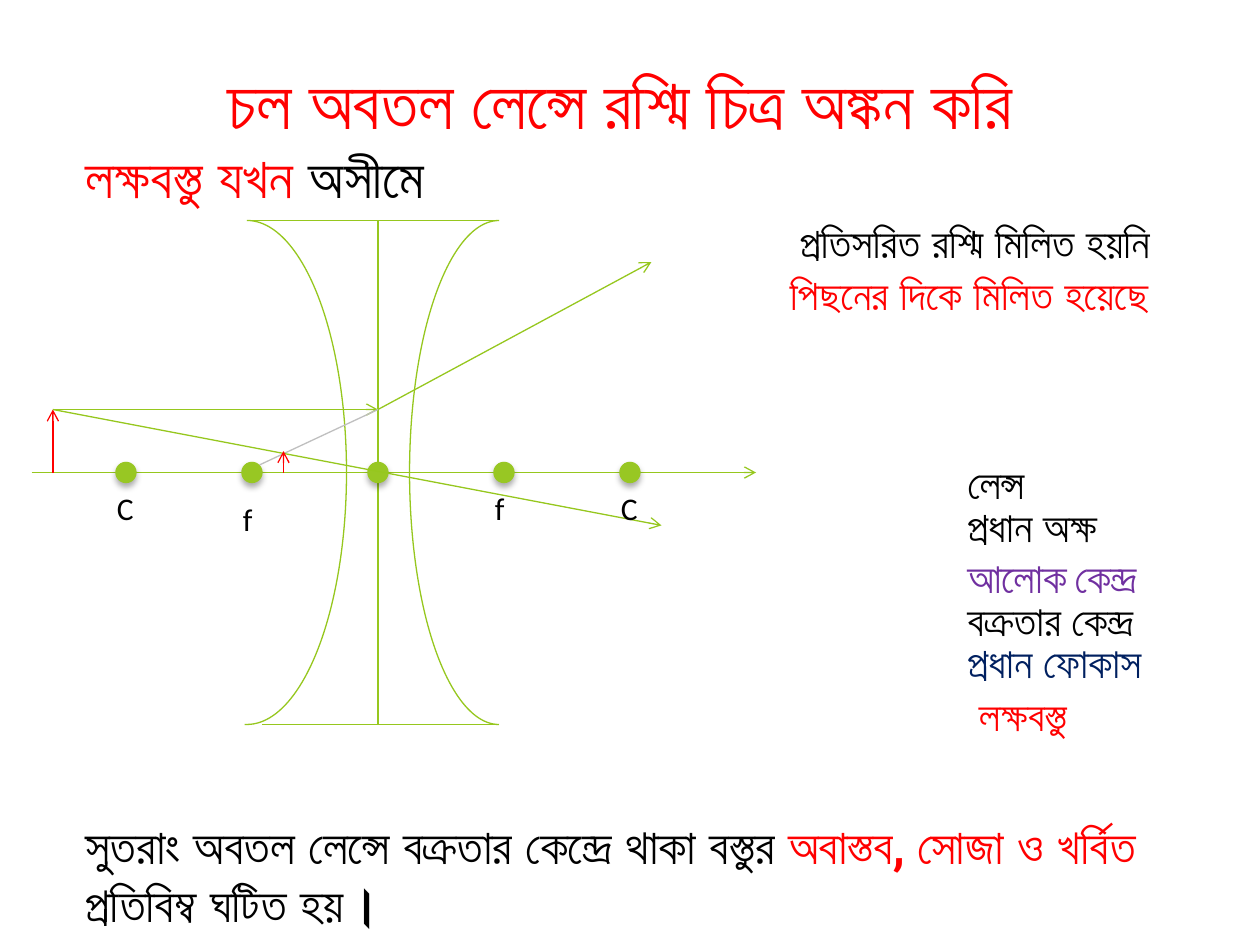
import dataclasses

import pptx
import pptx.dml.color
import pptx.enum.shapes
import pptx.enum.text
import pptx.oxml
import pptx.util
from pptx.util import Inches

DRAWING = 'xmlns:a="http://schemas.openxmlformats.org/drawingml/2006/main"'


@dataclasses.dataclass(frozen=True)
class Theme:
    """Colours, fonts and type sizes of the slide."""
    line: str = "96C71E"
    dot: str = "98C723"
    red: str = "FF0000"
    black: str = "000000"
    grey: str = "BFBFBF"
    purple: str = "7030A0"
    navy: str = "002060"
    bengali: str = "Roboto"
    latin: str = "Calibri"
    title: int = 40
    subtitle: int = 32
    conclusion: int = 28
    label: int = 24
    point: int = 18


THEME = Theme()


def colour(value):
    """Return a colour object for a hex string."""
    return pptx.dml.color.RGBColor.from_string(value)


def fill_text(box, spans, size, align=None, wrap=True, bold=None, font=THEME.bengali):
    """Write (text, colour[, size]) spans as one paragraph of a box."""
    frame = box.text_frame
    frame.word_wrap = wrap
    frame.auto_size = pptx.enum.text.MSO_AUTO_SIZE.SHAPE_TO_FIT_TEXT
    para = frame.paragraphs[0]
    para.alignment = align
    for text, shade, *own_size in spans:
        span = para.add_run()
        span.text = text
        points = own_size[0] if own_size else size
        formats = {"name": font, "size": pptx.util.Pt(points), "bold": bold}
        for name, value in formats.items():
            setattr(span.font, name, value)
        span.font.color.rgb = colour(shade)


def add_text(page, place, spans, size, **options):
    """Add a text box at left, top, width, height."""
    box = page.shapes.add_textbox(*map(Inches, place))
    fill_text(box, spans, size, **options)


def add_line(page, start, end, shade=THEME.line, arrow=False):
    """Add a straight line, with an open arrowhead if asked."""
    line = page.shapes.add_connector(
        pptx.enum.shapes.MSO_CONNECTOR.STRAIGHT, *map(Inches, (*start, *end)))
    line.line.width = pptx.util.Pt(0.75)
    line.line.color.rgb = colour(shade)
    if arrow:
        line.line._get_or_add_ln().append(
            pptx.oxml.parse_xml(f'<a:tailEnd {DRAWING} type="arrow"/>'))
    line._element.spPr.append(pptx.oxml.parse_xml(f"<a:effectLst {DRAWING}/>"))


def add_lens_side(page, place, sweep, rotation):
    """Add one curved face of the lens."""
    side = page.shapes.add_shape(
        pptx.enum.shapes.MSO_SHAPE.ARC, *map(Inches, place))
    side.adjustments[0] = 162
    side.adjustments[1] = sweep
    side.rotation = rotation
    side.shadow.inherit = False
    side.fill.background()
    side.line.width = pptx.util.Pt(0.75)
    side.line.color.rgb = colour(THEME.line)


def add_dot(page, x, y, size=0.17):
    """Add a marked point of the axis with a soft shadow."""
    dot = page.shapes.add_shape(
        pptx.enum.shapes.MSO_SHAPE.OVAL,
        *map(Inches, (x - size / 2, y - size / 2, size, size)))
    dot.fill.solid()
    dot.fill.fore_color.rgb = colour(THEME.dot)
    dot.line.fill.background()
    dot.shadow.inherit = False
    dot._element.spPr.remove(dot._element.spPr[-1])
    dot._element.spPr.append(pptx.oxml.parse_xml(
        f'<a:effectLst {DRAWING}><a:outerShdw blurRad="45000" dist="28000" '
        'dir="5400000" rotWithShape="0"><a:srgbClr val="000000">'
        '<a:alpha val="32000"/></a:srgbClr></a:outerShdw></a:effectLst>'))


def add_lens(page):
    """Draw the concave lens with its principal axis and points."""
    add_lens_side(page, (1.17, 1.75, 1.58, 4), 54.31, 0)
    add_lens_side(page, (3.25, 1.75, 1.42, 4), 54.03, 180)
    add_line(page, (1.96, 1.75), (3.96, 1.75))
    add_line(page, (2.08, 5.75), (3.96, 5.75))
    add_line(page, (3, 1.75), (3, 5.75))
    add_line(page, (0.25, 3.75), (6, 3.75), arrow=True)
    for x in range(1, 6):
        add_dot(page, x, 3.75)


def add_rays(page):
    """Draw the object, its image and the rays between them."""
    tip, bend = (0.42, 3.25), (3, 3.25)
    add_line(page, tip, bend, arrow=True)
    add_line(page, (0.42, 3.75), tip, THEME.red, arrow=True)
    add_line(page, bend, (5.17, 2.08), arrow=True)
    add_line(page, (2.06, 3.69), bend, THEME.grey)
    add_line(page, tip, (5.25, 4.17), arrow=True)
    add_line(page, (2.25, 3.75), (2.25, 3.58), THEME.red, arrow=True)


def add_labels(page):
    """Name the points of the axis and list the terms."""
    for text, x, y in (("C", 1, 3.83), ("f", 2, 3.92), ("f", 4, 3.83), ("C", 5, 3.83)):
        add_text(page, (x - 0.17, y, 0.42, 0.42), [(text, THEME.black)],
                 THEME.point, font=THEME.latin)
    centre = [("আলোক", THEME.purple), (" ", THEME.purple, THEME.point),
              ("কেন্দ্র", THEME.purple)]
    terms = (
        (7.58, 3.58, 1, True, [("লেন্স", THEME.black)]),
        (7.58, 3.92, 1.26, False, [("প্রধান অক্ষ", THEME.black)]),
        (7.58, 4.33, 1.57, False, centre),
        (7.58, 4.67, 1.67, True, [("বক্রতার কেন্দ্র", THEME.black)]),
        (7.58, 5, 1.63, False, [("প্রধান ফোকাস", THEME.navy)]),
        (7.67, 5.42, 0.93, False, [("লক্ষবস্তু", THEME.red)]),
    )
    for left, top, width, wrap, spans in terms:
        add_text(page, (left, top, width, 0.5), spans, THEME.label, wrap=wrap)


def add_statements(page):
    """Write the case, the remarks on the rays and the conclusion."""
    add_text(page, (0.58, 1.08, 2.98, 0.64),
             [("লক্ষবস্তু যখন ", THEME.red), ("অসীমে", THEME.black)],
             THEME.subtitle, wrap=False, bold=True)
    add_text(page, (6.25, 1.67, 3.17, 0.5),
             [("প্রতিসরিত রশ্মি মিলিত হয়নি", THEME.black)], THEME.label, bold=True)
    add_text(page, (6.17, 2.08, 3.33, 0.5),
             [("পিছনের দিকে মিলিত হয়েছে", THEME.red)], THEME.label, bold=True)
    add_text(page, (0.58, 6.42, 9, 1.04),
             [("সুতরাং অবতল লেন্সে বক্রতার কেন্দ্রে থাকা বস্তুর ", THEME.black),
              ("অবাস্তব, সোজা ও খর্বিত ", THEME.red),
              ("প্রতিবিম্ব ঘটিত হয়।", THEME.black)],
             THEME.conclusion, bold=True)


def add_title(page):
    """Place and fill the title placeholder."""
    title = page.shapes.title
    place = {"left": 0.42, "top": 0.42, "width": 9, "height": 0.77}
    for name, value in place.items():
        setattr(title, name, Inches(value))
    fill_text(title, [("চল অবতল লেন্সে রশ্মি চিত্র অঙ্কন করি", THEME.red)],
              THEME.title, align=pptx.enum.text.PP_ALIGN.CENTER)


def main():
    """Build the slide and save it."""
    deck = pptx.Presentation()
    deck.slide_width, deck.slide_height = Inches(10), Inches(7.5)
    page = deck.slides.add_slide(deck.slide_layouts.get_by_name("Title Only"))
    add_title(page)
    add_lens(page)
    add_rays(page)
    add_labels(page)
    add_statements(page)
    deck.save("out.pptx")


if __name__ == "__main__":
    main()
